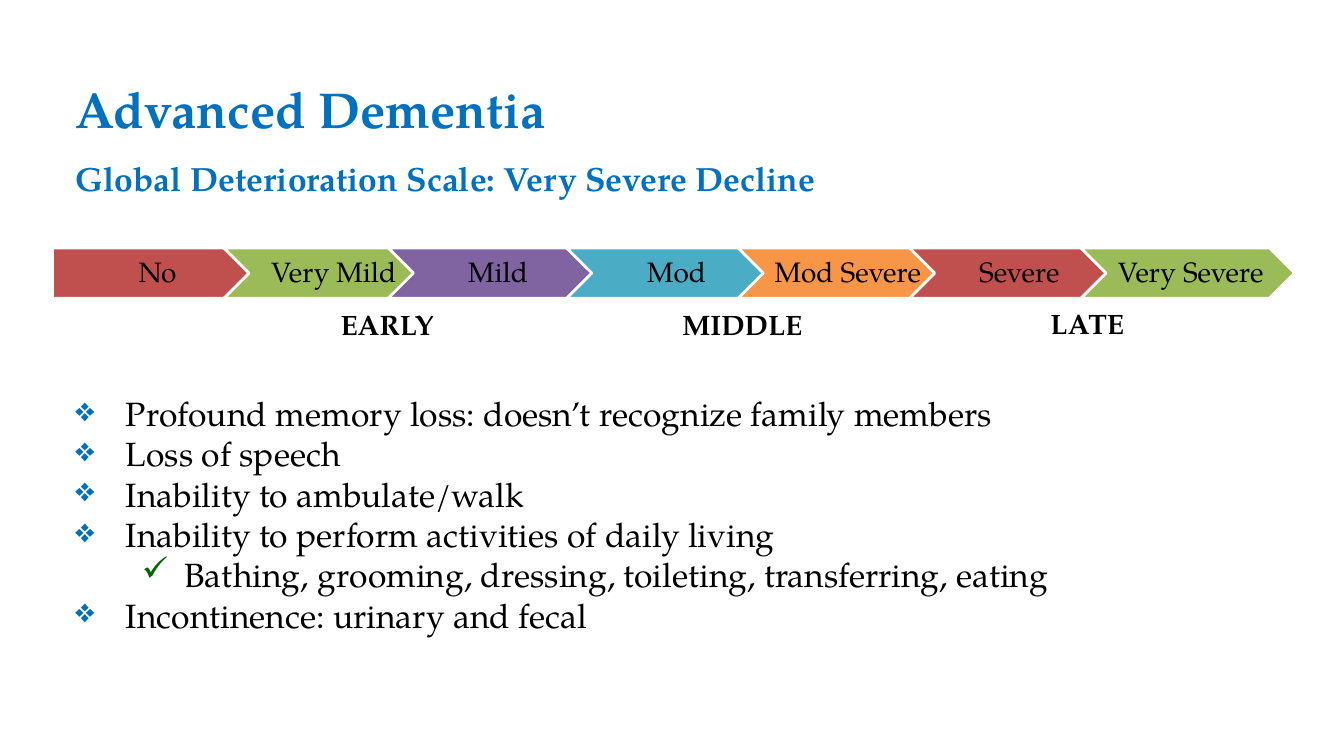
from lxml.etree import SubElement
from pptx import Presentation
from pptx.dml.color import RGBColor
from pptx.enum.shapes import MSO_SHAPE
from pptx.enum.text import MSO_ANCHOR, PP_ALIGN
from pptx.oxml.ns import qn
from pptx.util import Inches, Pt

FONT = "TeX Gyre Pagella"
COLORS = {
    "blue": "0070C0", "black": "000000", "white": "FFFFFF", "check": "006600",
    "red": "C0504D", "green": "9BBB59", "purple": "8064A2",
    "teal": "4BACC6", "orange": "F79646",
}

# Scale steps: label, colour, shift from the even spacing
STEPS = [
    ("No", "red", 0), ("Very Mild", "green", 0), ("Mild", "purple", -0.07),
    ("Mod", "teal", 0), ("Mod Severe", "orange", 0), ("Severe", "red", 0),
    ("Very Severe", "green", 0),
]
STAGES = [("EARLY", 3.28, 3, 1.21), ("MIDDLE", 6.67, 3, 1.67), ("LATE", 10.32, 2.99, 1.11)]

# Symptoms: text, level
SYMPTOMS = [
    ("Profound memory loss: doesn’t recognize family members", 0),
    ("Loss of speech", 0),
    ("Inability to ambulate/walk", 0),
    ("Inability to perform activities of daily living", 0),
    ("Bathing, grooming, dressing, toileting, transferring, eating", 1),
    ("Incontinence: urinary and fecal", 0),
]
# Bullet by level: character, colour, left margin, hanging indent
BULLETS = [("❖", "blue", 0.5, 0.5), ("✓", "check", 1.08, 0.42)]


def rgb(name):
    return RGBColor.from_string(COLORS[name])


def add_run(p, text, size, color="black", bold=False):
    r = p.add_run()
    r.text = text
    for key, value in {"name": FONT, "size": Pt(size), "bold": bold}.items():
        setattr(r.font, key, value)
    r.font.color.rgb = rgb(color)


def add_box(s, x, y, w, h, anchor=MSO_ANCHOR.TOP):
    tf = s.shapes.add_textbox(Inches(x), Inches(y), Inches(w), Inches(h)).text_frame
    tf.word_wrap = True
    tf.vertical_anchor = anchor
    return tf


def add_step(s, i, label, color, shift):
    kind = MSO_SHAPE.CHEVRON if i else MSO_SHAPE.PENTAGON
    sp = s.shapes.add_shape(kind, Inches(0.52 + 1.7 * i + shift), Inches(2.46),
                            Inches(2.12), Inches(0.5))
    sp.shadow.inherit = False
    sp.fill.solid()
    sp.fill.fore_color.rgb = rgb(color)
    sp.line.color.rgb = rgb("white")
    sp.line.width = Pt(2)
    tf = sp.text_frame
    frame = {
        "margin_left": Inches(0.09 if i else 0.12), "margin_right": Inches(0.03),
        "margin_top": Inches(0.06), "margin_bottom": Inches(0.06),
        "word_wrap": True, "vertical_anchor": MSO_ANCHOR.MIDDLE,
    }
    for key, value in frame.items():
        setattr(tf, key, value)
    p = tf.paragraphs[0]
    p.alignment = PP_ALIGN.CENTER
    p.line_spacing = 0.9
    add_run(p, label, 20)


def set_bullet(p, level):
    char, color, left, hang = BULLETS[level]
    p.level = level
    pPr = p._p.get_or_add_pPr()
    pPr.set("marL", str(Inches(left)))
    pPr.set("indent", str(-Inches(hang)))
    SubElement(SubElement(pPr, qn("a:buClr")), qn("a:srgbClr"), val=COLORS[color])
    SubElement(pPr, qn("a:buChar"), char=char)


def add_symptoms(s):
    tf = add_box(s, 0.65, 3.85, 12.02, 3.24)
    for i, (text, level) in enumerate(SYMPTOMS):
        p = tf.add_paragraph() if i else tf.paragraphs[0]
        set_bullet(p, level)
        add_run(p, text, 24)


def main():
    prs = Presentation()
    prs.slide_width, prs.slide_height = Inches(13.33), Inches(7.5)
    s = prs.slides.add_slide(prs.slide_layouts[6])

    # Headings
    title = add_box(s, 0.65, 0.63, 12.02, 0.89, MSO_ANCHOR.MIDDLE)
    add_run(title.paragraphs[0], "Advanced Dementia", 36, "blue", True)
    subtitle = add_box(s, 0.65, 1.52, 12.02, 0.5)
    add_run(subtitle.paragraphs[0], "Global Deterioration Scale: Very Severe Decline",
            24, "blue", True)

    # Deterioration scale with its stages
    for i, step in enumerate(STEPS):
        add_step(s, i, *step)
    for text, x, y, w in STAGES:
        add_run(add_box(s, x, y, w, 0.44).paragraphs[0], text, 20, bold=True)

    # Symptoms
    add_symptoms(s)
    prs.save("out.pptx")


if __name__ == "__main__":
    main()
